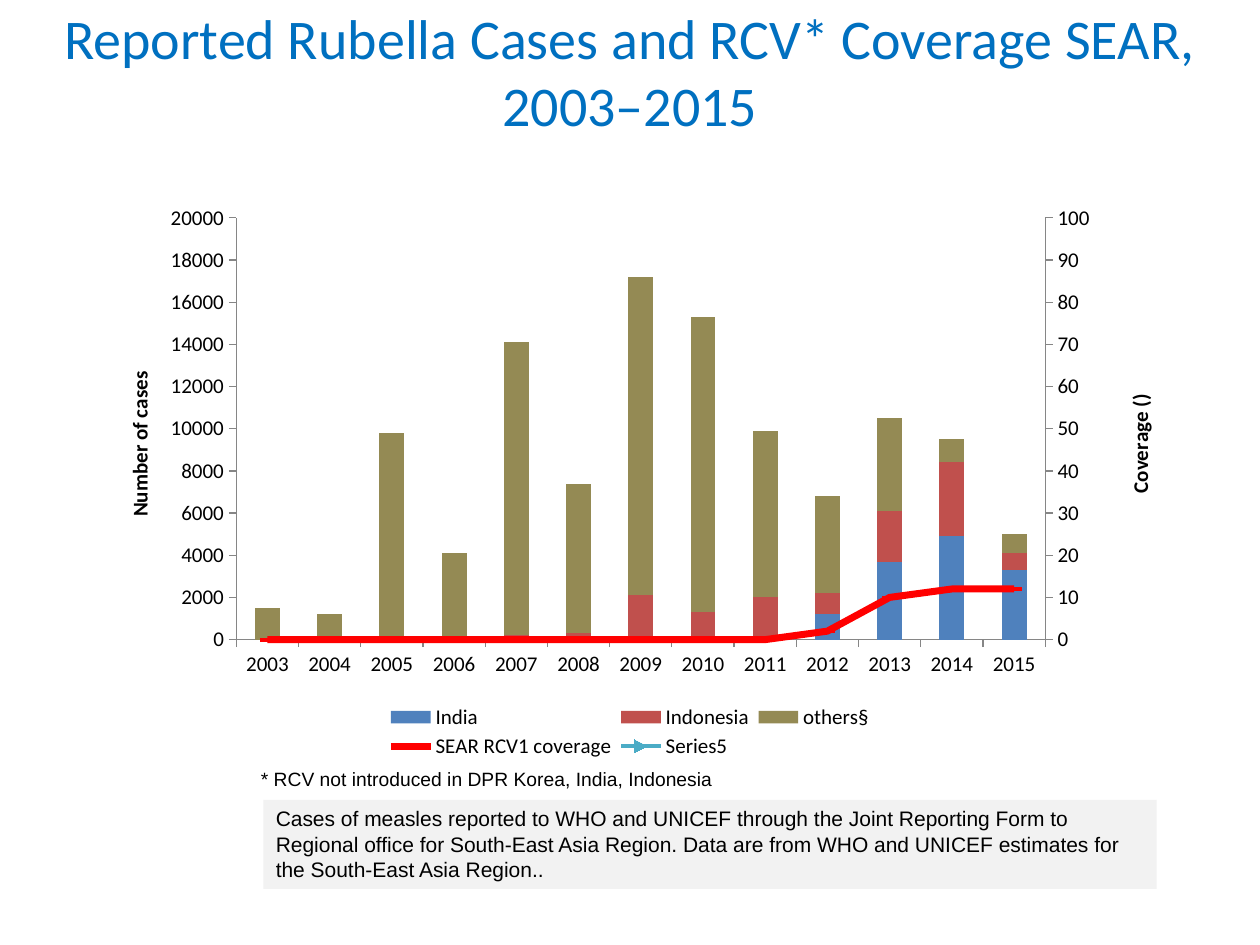
from copy import deepcopy

from lxml.etree import SubElement
from pptx import Presentation
from pptx.chart.axis import CategoryAxis, ValueAxis
from pptx.chart.data import CategoryChartData
from pptx.dml.color import RGBColor
from pptx.enum.chart import XL_CHART_TYPE, XL_LEGEND_POSITION, XL_MARKER_STYLE, XL_TICK_MARK
from pptx.enum.shapes import MSO_SHAPE
from pptx.enum.text import MSO_ANCHOR, PP_ALIGN
from pptx.oxml import parse_xml
from pptx.oxml.ns import nsdecls, qn
from pptx.util import Pt

YEARS = [str(year) for year in range(2003, 2016)]
CASES = [
    ("India", "4F81BD", [0] * 9 + [1200, 3700, 4900, 3300]),
    ("Indonesia", "C0504D",
     [0, 0, 0, 100, 200, 300, 2100, 1300, 2000, 1000, 2400, 3500, 800]),
    ("others§", "948A54",
     [1500, 1200, 9800, 4000, 13900, 7100, 15100, 14000, 7900, 4600, 4400, 1100, 900]),
]
COVERAGE = ("SEAR RCV1 coverage", "FF0000", [0] * 9 + [2, 10, 12, 12])
TOTALS = ("Series5", "4BACC6",
          [None] * 5 + [7400, 17200, 15300, 9800, 6900, 10400, 9500, 4900])
AXIS_IDS = {"catAx": "50010", "valAx": "50020"}


def color(hex_code):
    return RGBColor.from_string(hex_code)


def style_font(font, name, size, hex_code="000000", bold=False):
    font.name = name
    font.size = Pt(size)
    font.bold = bold
    font.color.rgb = color(hex_code)


def write_text(frame, text, font_name, size, hex_code="000000", align=PP_ALIGN.LEFT):
    frame.text = text
    paragraph = frame.paragraphs[0]
    paragraph.alignment = align
    style_font(paragraph.runs[0].font, font_name, size, hex_code)


def add_heading(slide):
    heading = slide.shapes.title
    heading.left, heading.top, heading.width, heading.height = Pt(0), Pt(-2), Pt(720), Pt(85)
    heading.text_frame.vertical_anchor = MSO_ANCHOR.MIDDLE
    write_text(heading.text_frame, "Reported Rubella Cases and RCV* Coverage SEAR, 2003–2015",
               "Calibri", 32, "0070C0", PP_ALIGN.CENTER)


def add_footnote(slide):
    footnote = slide.shapes.add_textbox(Pt(142), Pt(435), Pt(274), Pt(21))
    footnote.text_frame.word_wrap = False
    write_text(footnote.text_frame, "* RCV not introduced in DPR Korea, India, Indonesia",
               "Arial", 11)


def add_source_note(slide):
    note = slide.shapes.add_shape(MSO_SHAPE.RECTANGLE, Pt(150.5), Pt(457), Pt(510.5), Pt(51))
    note.shadow.inherit = False
    note.fill.solid()
    note.fill.fore_color.rgb = color("F2F2F2")
    note.line.fill.background()
    note.text_frame.word_wrap = True
    note.text_frame.vertical_anchor = MSO_ANCHOR.TOP
    write_text(note.text_frame,
               "Cases of measles reported to WHO and UNICEF through the Joint Reporting Form to "
               "Regional office for South-East Asia Region. Data are from WHO and UNICEF "
               "estimates for the South-East Asia Region..", "Arial", 12)


def layout_xml(x, y, width=None, height=None, inner=False):
    parts = ['<c:layoutTarget val="inner"/>'] if inner else []
    parts += ['<c:xMode val="edge"/><c:yMode val="edge"/>',
              f'<c:x val="{x}"/><c:y val="{y}"/>']
    if width:
        parts.append(f'<c:w val="{width}"/><c:h val="{height}"/>')
    return parse_xml(f'<c:layout {nsdecls("c")}><c:manualLayout>{"".join(parts)}'
                     '</c:manualLayout></c:layout>')


def place(element, after, layout):
    for previous in element.findall(qn("c:layout")):
        element.remove(previous)
    anchor = element.find(qn(after)) if after else None
    if anchor is None:
        element.insert(0, layout)
    else:
        anchor.addnext(layout)


def style_axis(axis):
    axis.has_major_gridlines = False
    axis.major_tick_mark = XL_TICK_MARK.OUTSIDE
    axis.minor_tick_mark = XL_TICK_MARK.NONE
    axis.format.line.color.rgb = color("868686")
    axis.format.line.width = Pt(0.75)
    style_font(axis.tick_labels.font, "Calibri", 12)


def scale_axis(axis, maximum, title, x, y):
    axis.minimum_scale = 0
    axis.maximum_scale = maximum
    axis.major_unit = maximum / 10
    axis.axis_title.text_frame.text = title
    style_font(axis.axis_title.text_frame.paragraphs[0].runs[0].font, "Calibri", 12, bold=True)
    title_element = axis.axis_title.format and axis.axis_title._element
    place(title_element, "c:tx", layout_xml(x, y))


def add_second_axis(plot_area, value_axis):
    copies = {}
    for kind, other in (("valAx", "catAx"), ("catAx", "valAx")):
        axis = deepcopy(plot_area.find(qn(f"c:{kind}")))
        axis.find(qn("c:axId")).set("val", AXIS_IDS[kind])
        axis.find(qn("c:crossAx")).set("val", AXIS_IDS[other])
        copies[kind] = axis
    copies["valAx"].find(qn("c:axPos")).set("val", "r")
    copies["valAx"].find(qn("c:crosses")).set("val", "max")
    plot_area.findall(qn("c:valAx"))[-1].addnext(copies["valAx"])
    copies["valAx"].addnext(copies["catAx"])
    CategoryAxis(copies["catAx"]).visible = False
    scale_axis(ValueAxis(copies["valAx"]), 100, "Coverage ()", 0.955, 0.344)


def move_to_lines(plot_area, first_line):
    bars = plot_area.find(qn("c:barChart"))
    lines = parse_xml(f'<c:lineChart {nsdecls("c")}><c:grouping val="standard"/>'
                      '<c:varyColors val="0"/></c:lineChart>')
    for series in bars.findall(qn("c:ser"))[first_line:]:
        invert = series.find(qn("c:invertIfNegative"))
        if invert is not None:
            series.remove(invert)
        lines.append(series)
    SubElement(lines, qn("c:marker")).set("val", "1")
    for kind in ("catAx", "valAx"):
        SubElement(lines, qn("c:axId")).set("val", AXIS_IDS[kind])
    bars.addnext(lines)


def style_line(series, hex_code, width):
    series.smooth = False
    series.format.line.color.rgb = color(hex_code)
    series.format.line.width = Pt(width)


def add_cases_chart(slide):
    data = CategoryChartData()
    data.categories = YEARS
    for name, _, values in CASES + [COVERAGE, TOTALS]:
        data.add_series(name, values)
    chart = slide.shapes.add_chart(XL_CHART_TYPE.COLUMN_STACKED, Pt(51), Pt(111.5),
                                   Pt(618), Pt(324.5), data).chart
    style_font(chart.font, "Calibri", 12)
    chart.has_title = False
    plot_area = chart.plots[0]._element.getparent()
    place(plot_area, None, layout_xml(0.136, 0.04, 0.748, 0.743, inner=True))

    style_axis(chart.category_axis)
    style_axis(chart.value_axis)
    scale_axis(chart.value_axis, 20000, "Number of cases", 0.03, 0.304)
    move_to_lines(plot_area, len(CASES))
    add_second_axis(plot_area, chart.value_axis)

    columns, lines = chart.plots
    columns.gap_width = 150
    columns.overlap = 100
    columns.vary_by_categories = False
    for series, (_, hex_code, _) in zip(columns.series, CASES):
        series.format.fill.solid()
        series.format.fill.fore_color.rgb = color(hex_code)
    coverage, totals = lines.series
    style_line(coverage, COVERAGE[1], 4)
    style_line(totals, TOTALS[1], 2.25)
    coverage.marker.style = XL_MARKER_STYLE.DASH
    coverage.marker.size = 8
    coverage.marker.format.fill.solid()
    coverage.marker.format.fill.fore_color.rgb = color(COVERAGE[1])
    coverage.marker.format.line.color.rgb = color(COVERAGE[1])

    chart.has_legend = True
    chart.legend.position = XL_LEGEND_POSITION.BOTTOM
    chart.legend.include_in_layout = False
    style_font(chart.legend.font, "Calibri", 12)
    place(chart.legend._element, "c:legendPos", layout_xml(0.27, 0.89, 0.46, 0.11))


def main():
    deck = Presentation()
    deck.slide_width, deck.slide_height = Pt(720), Pt(540)
    slide = deck.slides.add_slide(deck.slide_layouts[5])
    add_cases_chart(slide)
    add_heading(slide)
    add_source_note(slide)
    add_footnote(slide)
    deck.save("out.pptx")


if __name__ == "__main__":
    main()
